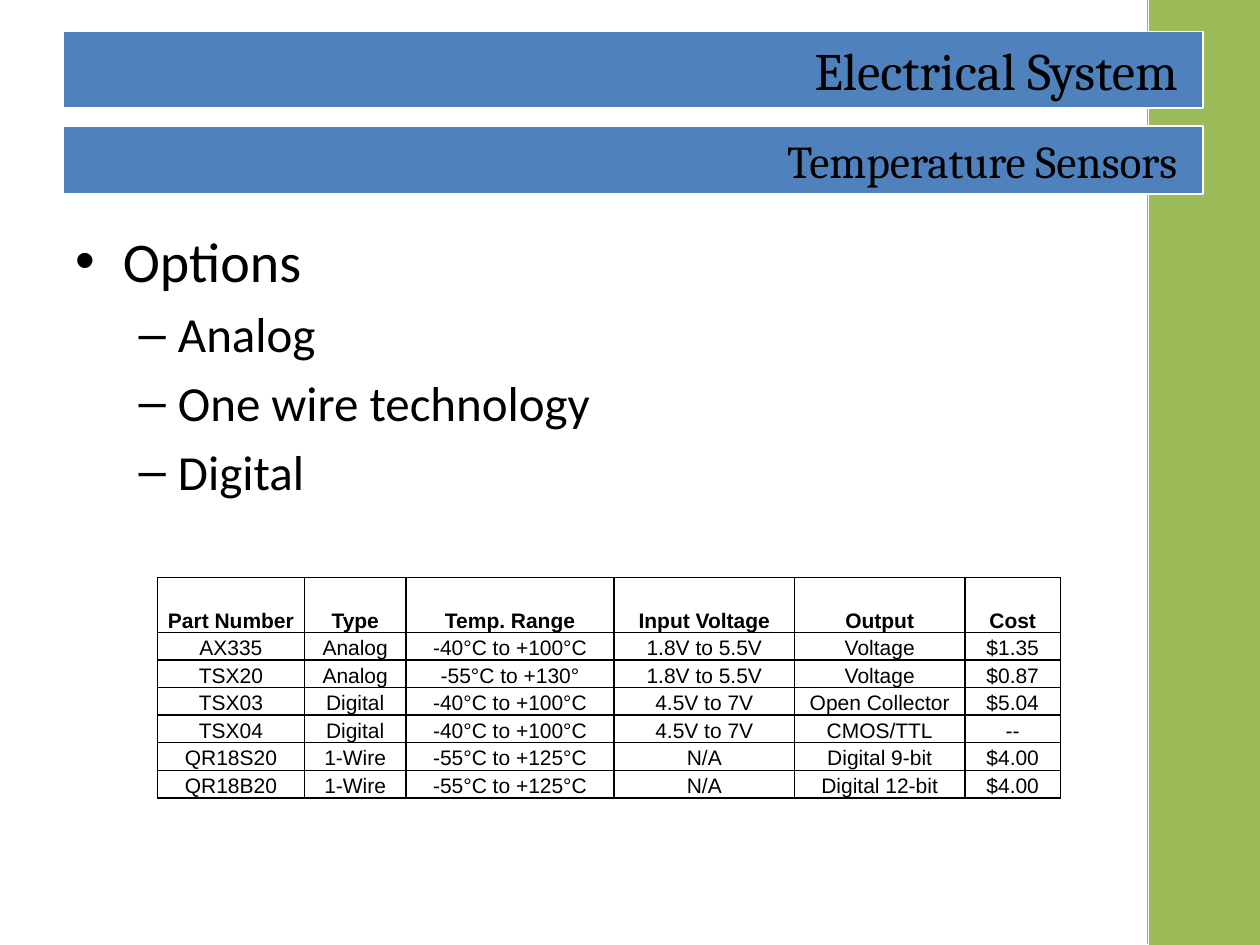
from pptx import Presentation
from pptx.dml.color import RGBColor
from pptx.enum.dml import MSO_PATTERN
from pptx.enum.shapes import MSO_SHAPE
from pptx.enum.text import MSO_ANCHOR, MSO_AUTO_SIZE, PP_ALIGN
from pptx.oxml import parse_xml
from pptx.oxml.ns import nsdecls
from pptx.util import Pt

BLACK = RGBColor(0x00, 0x00, 0x00)
WHITE = RGBColor(0xFF, 0xFF, 0xFF)
BLUE = RGBColor(0x4F, 0x81, 0xBD)
GREEN = RGBColor(0x9B, 0xBB, 0x59)


def write_text(paragraph, text, font, size, bold=False, align=None, line_spacing=None):
    run = paragraph.add_run()
    run.text = text
    run.font.name = font
    run.font.size = Pt(size)
    run.font.bold = bold
    run.font.color.rgb = BLACK
    paragraph.alignment = align
    paragraph.line_spacing = line_spacing


def place(shape, left, top, width, height):
    shape.left, shape.top = Pt(left), Pt(top)
    shape.width, shape.height = Pt(width), Pt(height)


presentation = Presentation()
presentation.slide_width = Pt(720)
presentation.slide_height = Pt(540)
slide = presentation.slides.add_slide(presentation.slide_layouts[1])
shapes = slide.shapes
title = shapes.title
body = slide.placeholders[1]

side_band = shapes.add_shape(MSO_SHAPE.RECTANGLE, Pt(656.5), Pt(0), Pt(63.5), Pt(540))
side_band.fill.solid()
side_band.fill.fore_color.rgb = GREEN
band_edge = shapes.add_shape(MSO_SHAPE.RECTANGLE, Pt(654), Pt(0), Pt(2.5), Pt(539.5))
band_edge.fill.patterned()
band_edge.fill.pattern = MSO_PATTERN.LIGHT_VERTICAL
band_edge.fill.fore_color.rgb = GREEN
band_edge.fill.back_color.rgb = WHITE
for shape in (side_band, band_edge):
    shape.shadow.inherit = False
    shape.line.fill.background()
    title._element.addprevious(shape._element)

subtitle = shapes.add_shape(MSO_SHAPE.RECTANGLE, Pt(36), Pt(72), Pt(651.5), Pt(39))
subtitle.shadow.inherit = False
for banner, text, size, top, height in (
    (title, "Electrical System", 30, 18, 43.75),
    (subtitle, "Temperature Sensors", 26, 72, 39),
):
    place(banner, 36, top, 651.5, height)
    banner.fill.solid()
    banner.fill.fore_color.rgb = BLUE
    banner.line.color.rgb = WHITE
    banner.line.width = Pt(1)
    frame = banner.text_frame
    frame.word_wrap = True
    frame.auto_size = MSO_AUTO_SIZE.NONE
    frame.vertical_anchor = MSO_ANCHOR.MIDDLE
    frame.margin_left = frame.margin_right = Pt(14.4)
    frame.margin_top = frame.margin_bottom = Pt(3.6)
    write_text(frame.paragraphs[0], text, "Cambria", size, align=PP_ALIGN.RIGHT)

place(body, 36, 126, 648, 356.5)
body.text_frame.auto_size = MSO_AUTO_SIZE.NONE
options = [("Options", 0), ("Analog", 1), ("One wire technology", 1), ("Digital", 1)]
for index, (text, level) in enumerate(options):
    paragraph = body.text_frame.paragraphs[0] if index == 0 else body.text_frame.add_paragraph()
    paragraph.level = level
    write_text(paragraph, text, "Calibri", 28 if level else 32)

sensors = [
    ("Part Number", "Type", "Temp. Range", "Input Voltage", "Output", "Cost"),
    ("AX335", "Analog", "-40°C to +100°C", "1.8V to 5.5V", "Voltage", "$1.35"),
    ("TSX20", "Analog", "-55°C to +130°", "1.8V to 5.5V", "Voltage", "$0.87"),
    ("TSX03", "Digital", "-40°C to +100°C", "4.5V to 7V", "Open Collector", "$5.04"),
    ("TSX04", "Digital", "-40°C to +100°C", "4.5V to 7V", "CMOS/TTL", "--"),
    ("QR18S20", "1-Wire", "-55°C to +125°C", "N/A", "Digital 9-bit", "$4.00"),
    ("QR18B20", "1-Wire", "-55°C to +125°C", "N/A", "Digital 12-bit", "$4.00"),
]
column_widths = [84, 58, 119, 103, 97.5, 54.5]
row_height = 15.75
table = shapes.add_table(
    len(sensors), len(column_widths), Pt(90), Pt(330),
    Pt(sum(column_widths)), Pt(row_height * (len(sensors) + 1)),
).table
table.horz_banding = False
for column, width in zip(table.columns, column_widths):
    column.width = Pt(width)

for row_index, values in enumerate(sensors):
    header = row_index == 0
    table.rows[row_index].height = Pt(row_height * (2 if header else 1))
    for column_index, value in enumerate(values):
        cell = table.cell(row_index, column_index)
        cell.margin_left = cell.margin_right = Pt(5)
        cell.margin_top = cell.margin_bottom = Pt(0)
        cell.vertical_anchor = MSO_ANCHOR.BOTTOM if header else MSO_ANCHOR.MIDDLE
        write_text(cell.text_frame.paragraphs[0], value, "Arial", 12, bold=header,
                   align=PP_ALIGN.CENTER, line_spacing=1.15)
        properties = cell._tc.get_or_add_tcPr()
        for side in ("lnL", "lnR", "lnT", "lnB"):
            properties.append(parse_xml(
                f'<a:{side} {nsdecls("a")} w="{Pt(1)}"><a:solidFill>'
                f'<a:srgbClr val="{BLACK}"/></a:solidFill></a:{side}>'))
        cell.fill.background()

presentation.save("out.pptx")
